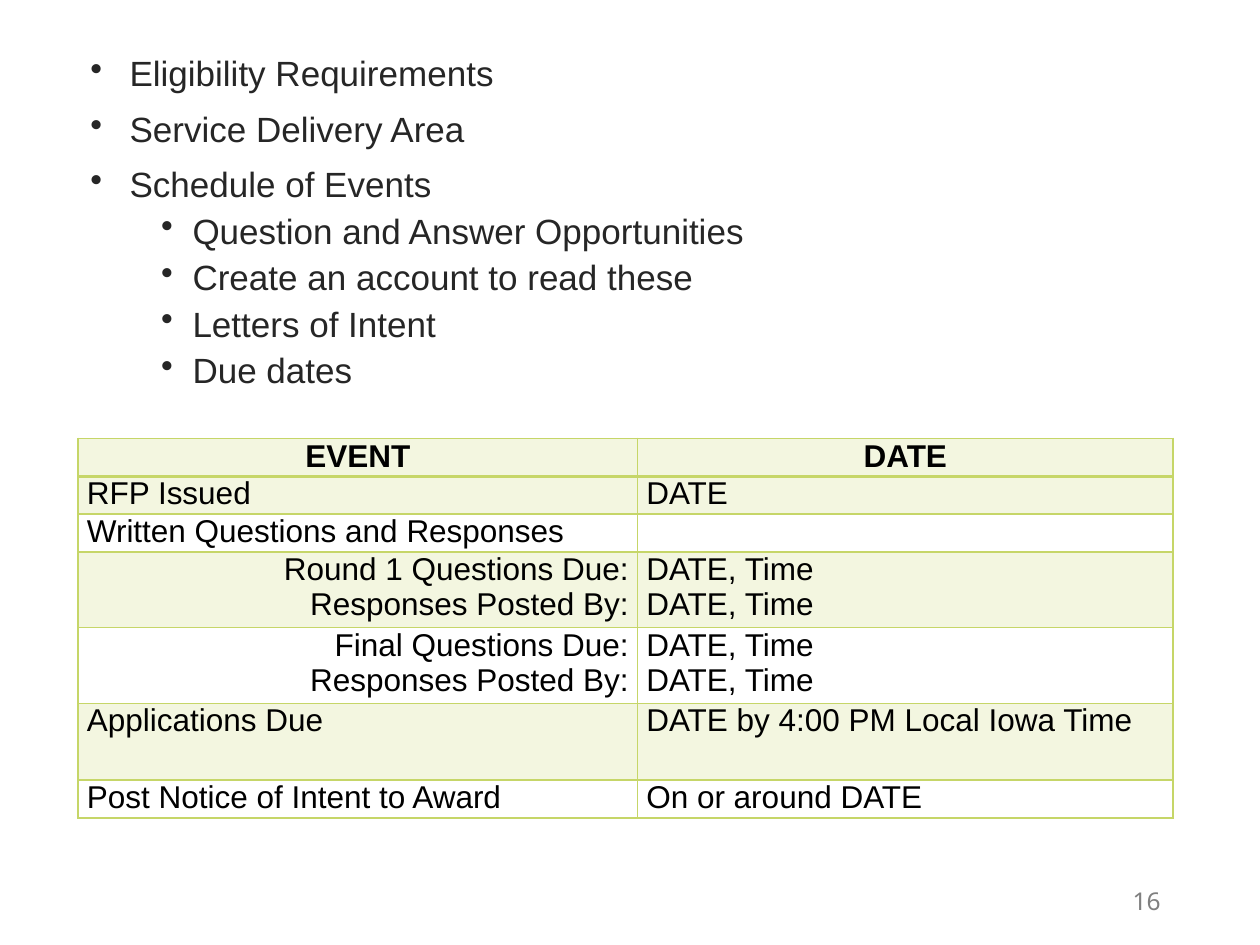
from lxml.etree import SubElement
from pptx import Presentation
from pptx.dml.color import RGBColor
from pptx.enum.text import MSO_ANCHOR, PP_ALIGN
from pptx.oxml import parse_xml
from pptx.oxml.ns import nsdecls, qn
from pptx.util import Inches, Pt

WHITE = RGBColor(0xFF, 0xFF, 0xFF)
BLACK = RGBColor(0, 0, 0)
DARK = RGBColor(0x26, 0x26, 0x26)
GRAY = RGBColor(0x80, 0x80, 0x80)
LIME = RGBColor(0xC6, 0xD6, 0x68)

TOPICS = [
    (0, "Eligibility Requirements"),
    (0, "Service Delivery Area"),
    (0, "Schedule of Events"),
    (1, "Question and Answer Opportunities"),
    (1, "Create an account to read these"),
    (1, "Letters of Intent"),
    (1, "Due dates"),
]
# Left margin, hanging indent and space before of each level
LEVELS = [(Inches(0.31), Inches(-0.31), Pt(10)),
          (Inches(0.81), Inches(-0.25), Pt(5))]

# Row height, alignment of the event column, event, date
EVENTS = [
    (0.26, PP_ALIGN.CENTER, "EVENT", "DATE"),
    (0.26, PP_ALIGN.LEFT, "RFP Issued", "DATE"),
    (0.26, PP_ALIGN.LEFT, "Written Questions and Responses", ""),
    (0.53, PP_ALIGN.RIGHT, "Round 1 Questions Due:\nResponses Posted By:",
     "DATE, Time\nDATE, Time"),
    (0.53, PP_ALIGN.RIGHT, "Final Questions Due:\nResponses Posted By:",
     "DATE, Time\nDATE, Time"),
    (0.61, PP_ALIGN.LEFT, "Applications Due", "DATE by 4:00 PM Local Iowa Time"),
    (0.26, PP_ALIGN.LEFT, "Post Notice of Intent to Award", "On or around DATE"),
]


def style(font, name, size, color, bold=False):
    font.name, font.size, font.bold = name, Pt(size), bold
    font.color.rgb = color


def add_topics(slide, box):
    frame = slide.shapes.add_textbox(*box).text_frame
    frame.word_wrap = True
    frame.text = "\n".join(text for _, text in TOPICS)
    for i, (para, (level, _)) in enumerate(zip(frame.paragraphs, TOPICS)):
        margin, indent, gap = LEVELS[level]
        props = para._p.get_or_add_pPr()
        props.set("marL", str(margin))
        props.set("indent", str(indent))
        SubElement(props, qn("a:buChar")).set("char", "•")
        para.level = level
        para.line_spacing = 0.9
        if i:
            para.space_before = gap
        style(para.runs[0].font, "Arial", 20, DARK)


def set_borders(cell, top, bottom):
    props = cell._tc.get_or_add_tcPr()
    sides = [("lnL", 1), ("lnR", 1), ("lnT", top), ("lnB", bottom)]
    for i, (side, width) in enumerate(sides):
        props.insert(i, parse_xml(
            f'<a:{side} {nsdecls("a")} w="{Pt(width)}"><a:solidFill>'
            f'<a:srgbClr val="{LIME}"/></a:solidFill></a:{side}>'))


def set_fill(cell, tinted):
    if not tinted:
        cell.fill.background()
        return
    cell.fill.solid()
    cell.fill.fore_color.rgb = LIME
    color = cell._tc.tcPr.find(f"{qn('a:solidFill')}/{qn('a:srgbClr')}")
    SubElement(color, qn("a:alpha")).set("val", "20000")


def add_events(slide, box):
    table = slide.shapes.add_table(len(EVENTS), 2, *box).table
    table.first_row = table.horz_banding = False
    table.columns[0].width = Inches(4.44)
    table.columns[1].width = box[2] - Inches(4.44)
    for r, (height, align, *texts) in enumerate(EVENTS):
        table.rows[r].height = Inches(height)
        head = r == 0
        for c, text in enumerate(texts):
            cell = table.cell(r, c)
            cell.margin_left = cell.margin_right = Inches(0.07)
            cell.margin_top = cell.margin_bottom = 0
            cell.text_frame.text = text
            for para in cell.text_frame.paragraphs:
                para.alignment = align if head or c == 0 else PP_ALIGN.LEFT
                style(para.font, "Arial", 18, BLACK, head)
                for run in para.runs:
                    style(run.font, "Arial", 18, BLACK, head)
                if not text:
                    SubElement(para._p, qn("a:endParaRPr")).set("sz", "1800")
            # Header and odd rows are tinted; a heavier rule closes the header
            set_fill(cell, head or r % 2 == 1)
            set_borders(cell, 2 if r == 1 else 1, 2 if head else 1)


def add_number(slide, box):
    frame = slide.shapes.add_textbox(*box).text_frame
    frame.word_wrap = True
    frame.vertical_anchor = MSO_ANCHOR.MIDDLE
    frame.text = "16"
    para = frame.paragraphs[0]
    para.alignment = PP_ALIGN.RIGHT
    style(para.runs[0].font, "Noto Sans", 14, GRAY)


def main():
    deck = Presentation()
    deck.slide_width, deck.slide_height = Inches(10), Inches(7.5)
    slide = deck.slides.add_slide(deck.slide_layouts[6])
    slide.background.fill.solid()
    slide.background.fill.fore_color.rgb = WHITE

    # Page number, topic list, schedule table
    add_number(slide, (Inches(7.06), Inches(6.95), Inches(2.25), Inches(0.4)))
    add_topics(slide, (Inches(0.62), Inches(0.4), Inches(8.97), Inches(5.21)))
    add_events(slide, (Inches(0.62), Inches(3.48), Inches(8.69), Inches(3.01)))
    deck.save("out.pptx")


if __name__ == "__main__":
    main()
